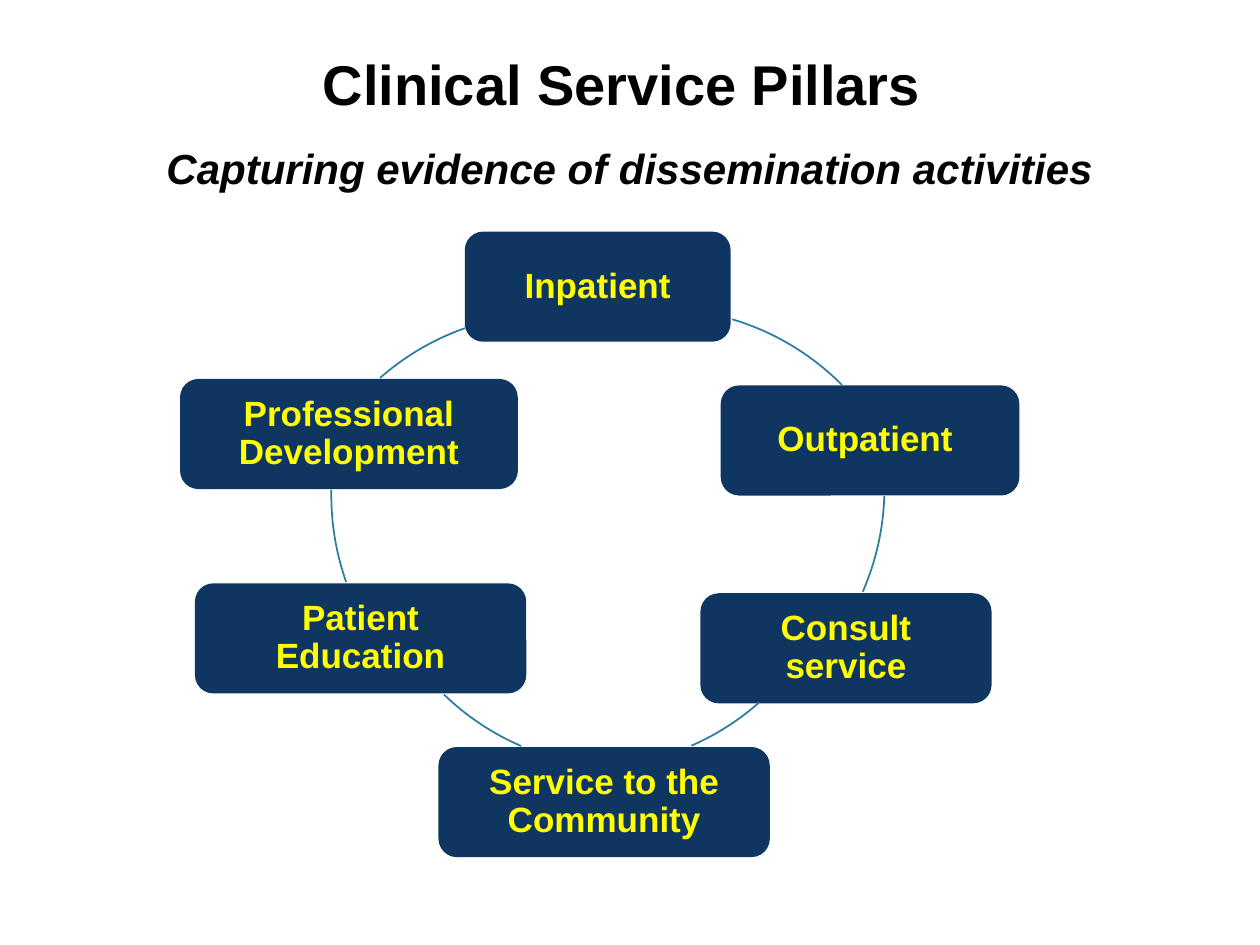
from dataclasses import dataclass

from lxml.etree import SubElement
from pptx import Presentation
from pptx.dml.color import RGBColor as Rgb
from pptx.enum.shapes import MSO_SHAPE as Kind
from pptx.enum.text import MSO_ANCHOR as Anchor, MSO_AUTO_SIZE as Fit, PP_ALIGN as Align
from pptx.oxml.ns import qn
from pptx.util import Cm, Pt


@dataclass(frozen=True)
class Theme:
    face: str = "Arial"
    ink: str = "000000"
    fill: str = "0F3661"
    label: str = "FFFF00"
    ring: str = "2C7C9F"
    head: int = 32
    sub: int = 24
    body: int = 20


THEME = Theme()
HIGH = 2.22
RING = 10.44

NODES = [
    ("Inpatient", 5.74, 0, 5.36),
    ("Outpatient ", 10.9, 3.1, 6.02),
    ("Consult service", 10.49, 7.29, 5.87),
    ("Service to the Community", 5.21, 10.39, 6.68),
    ("Patient Education", 0.3, 7.09, 6.68),
    ("Professional Development", 0, 2.97, 6.81),
]
ARCS = [
    (4.42, 1.55, 286.6, 315.2),
    (3.76, -0.05, 1.8, 23.6),
    (3, 0.36, 48.5, 66.4),
    (3.73, 0.36, 113.4, 134),
    (3.05, 0.1, 160.5, 181.3),
    (2.26, 1.65, 228.7, 250.6),
]


def style(run, size, color, slant=None):
    font = run.font
    font.name, font.size, font.bold, font.italic = THEME.face, Pt(size), True, slant
    font.color.rgb = Rgb.from_string(color)


def add_title(slide, x, y, w, h):
    title = slide.shapes.title
    title.left, title.top, title.width, title.height = Cm(x), Cm(y), Cm(w), Cm(h)
    frame = title.text_frame
    frame.text = "Clinical Service Pillars \vCapturing evidence of dissemination activities"
    frame.auto_size, frame.word_wrap = Fit.NONE, True
    frame.vertical_anchor = Anchor.BOTTOM
    para = frame.paragraphs[0]
    para.alignment, para.line_spacing = Align.CENTER, 1.5
    head, sub = para.runs
    style(head, THEME.head, THEME.ink)
    style(sub, THEME.sub, THEME.ink, True)
    SubElement(para._p.find(qn("a:br")), qn("a:rPr"), sz=str(THEME.head * 100))


def add_node(slide, text, x, y, w):
    node = slide.shapes.add_shape(Kind.ROUNDED_RECTANGLE, Cm(x), Cm(y), Cm(w), Cm(HIGH))
    node.shadow.inherit = False
    node.fill.solid()
    node.fill.fore_color.rgb = Rgb.from_string(THEME.fill)
    node.line.fill.background()
    frame = node.text_frame
    frame.text = text
    frame.word_wrap, frame.vertical_anchor = True, Anchor.MIDDLE
    frame.margin_left = frame.margin_right = Cm(0.25)
    frame.margin_top = frame.margin_bottom = Cm(0.25)
    para = frame.paragraphs[0]
    para.alignment, para.line_spacing = Align.CENTER, 0.9
    style(para.runs[0], THEME.body, THEME.label)


def add_arc(slide, x, y, start, end):
    arc = slide.shapes.add_shape(Kind.ARC, Cm(x), Cm(y), Cm(RING), Cm(RING))
    arc.shadow.inherit = False
    arc.fill.background()
    arc.line.color.rgb = Rgb.from_string(THEME.ring)
    arc.line.width = Pt(1)
    for i, angle in enumerate((start, end)):
        arc.adjustments[i] = angle * 0.6


def add_cycle(slide, x, y):
    for (text, left, top, w), (dx, dy, start, end) in zip(NODES, ARCS):
        add_node(slide, text, x + left, y + top, w)
        add_arc(slide, x + dx, y + dy, start, end)


def main():
    deck = Presentation()
    deck.slide_width, deck.slide_height = Cm(25.4), Cm(19.05)
    slide = deck.slides.add_slide(deck.slide_layouts[5])
    add_title(slide, 1.52, 0, 22.35, 4.01)
    add_cycle(slide, 3.63, 4.67)
    deck.save("out.pptx")


if __name__ == "__main__":
    main()
